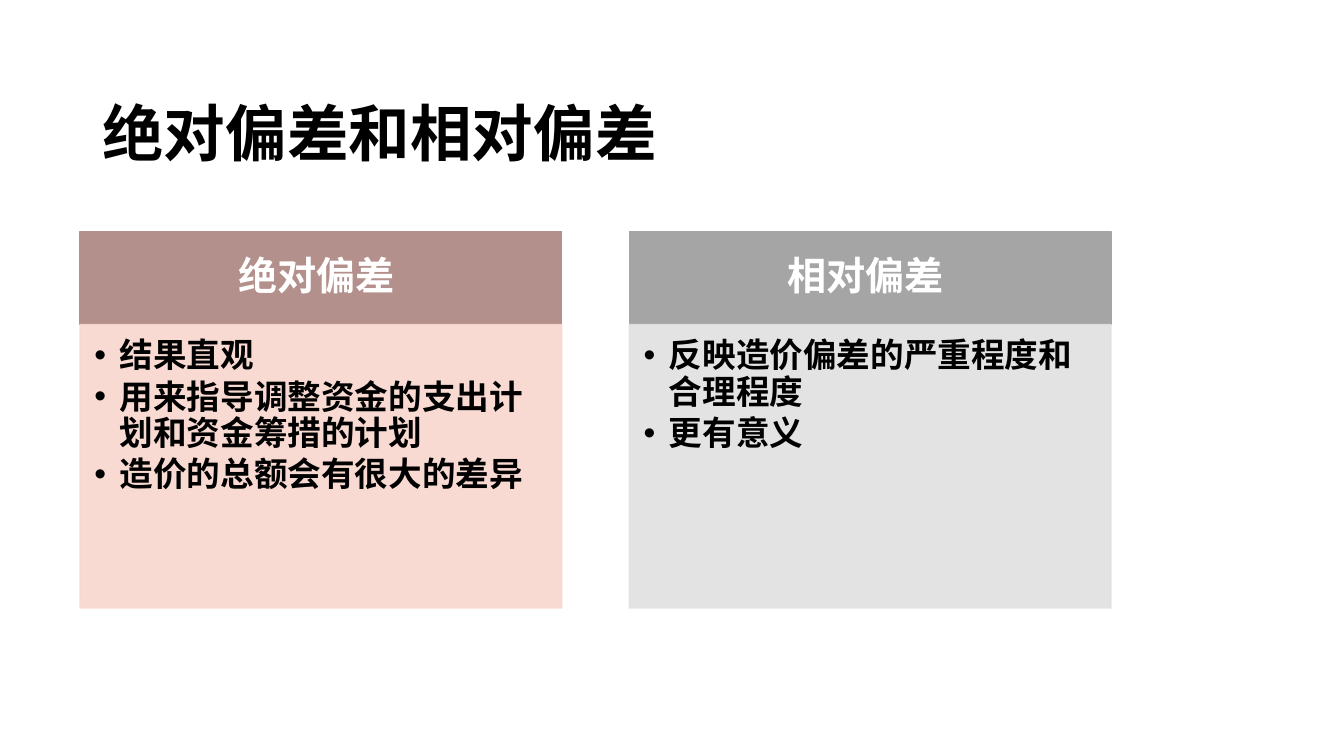
from dataclasses import dataclass

from lxml.etree import SubElement
from pptx import Presentation
from pptx.dml.color import RGBColor
from pptx.enum.lang import MSO_LANGUAGE_ID
from pptx.enum.shapes import MSO_SHAPE
from pptx.enum.text import MSO_ANCHOR, PP_ALIGN
from pptx.oxml.ns import qn
from pptx.util import Cm, Pt


@dataclass(frozen=True)
class Theme:
    font: str = "Times New Roman"
    ink: str = "000000"
    header_ink: str = "FFFFFF"
    rose: str = "B3908C"
    pale_rose: str = "F8D7CE"
    grey: str = "A5A5A5"
    pale_grey: str = "E1E1E1"
    title_size: int = 44
    header_size: int = 28
    body_size: int = 24
    body_opacity: int = 90


@dataclass(frozen=True)
class Box:
    left: int
    top: int
    width: int
    height: int

    def bounds(self):
        return self.left, self.top, self.width, self.height


THEME = Theme()

COLUMNS = [
    ("绝对偏差 ", THEME.rose, THEME.pale_rose,
     ["结果直观", "用来指导调整资金的支出计划和资金筹措的计划", "造价的总额会有很大的差异"]),
    ("相对偏差 ", THEME.grey, THEME.pale_grey,
     ["反映造价偏差的严重程度和合理程度", "更有意义"]),
]


def set_frame(frame, anchor, margins):
    frame.word_wrap = True
    frame.vertical_anchor = anchor
    frame.margin_left, frame.margin_top, frame.margin_right, frame.margin_bottom = map(Cm, margins)


def add_span(para, text, size, color):
    span = para.add_run()
    span.text = text
    span.font.name = THEME.font
    span.font.size = Pt(size)
    span.font.bold = True
    span.font.color.rgb = RGBColor.from_string(color)
    span.font.language_id = MSO_LANGUAGE_ID.SIMPLIFIED_CHINESE


def add_bullet(para):
    properties = para._p.get_or_add_pPr()
    properties.set("marL", str(Cm(0.64)))
    properties.set("indent", str(Cm(-0.64)))
    SubElement(properties, qn("a:buFont"), typeface="Arial")
    SubElement(properties, qn("a:buChar"), char="•")


def add_panel(page, box, color, opacity=100):
    panel = page.shapes.add_shape(MSO_SHAPE.RECTANGLE, *box.bounds())
    panel.shadow.inherit = False
    panel.line.width = Pt(1)
    for fill in (panel.fill, panel.line.fill):
        fill.solid()
        fill.fore_color.rgb = RGBColor.from_string(color)
    if opacity < 100:
        for tint in panel._element.spPr.iter(qn("a:srgbClr")):
            SubElement(tint, qn("a:alpha"), val=str(opacity * 1000))
    return panel.text_frame


def add_title(page, box, text):
    frame = page.shapes.add_textbox(*box.bounds()).text_frame
    set_frame(frame, MSO_ANCHOR.MIDDLE, (0.25, 0.13, 0.25, 0.13))
    para = frame.paragraphs[0]
    para.line_spacing = 1.5
    add_span(para, text, THEME.title_size, THEME.ink)


def add_header(page, box, text, color):
    frame = add_panel(page, box, color)
    set_frame(frame, MSO_ANCHOR.MIDDLE, (0.56, 0.3, 0.56, 0.3))
    para = frame.paragraphs[0]
    para.alignment = PP_ALIGN.CENTER
    para.line_spacing = 0.9
    add_span(para, text, THEME.header_size, THEME.header_ink)


def add_points(page, box, points, color):
    frame = add_panel(page, box, color, THEME.body_opacity)
    set_frame(frame, MSO_ANCHOR.TOP, (0.36, 0.36, 0.48, 0.53))
    for index, point in enumerate(points):
        para = frame.add_paragraph() if index else frame.paragraphs[0]
        para.alignment = PP_ALIGN.LEFT
        para.line_spacing = 0.9
        para.space_after = Pt(THEME.body_size * 0.15)
        add_bullet(para)
        add_span(para, point, THEME.body_size, THEME.ink)


def add_columns(page, box, columns):
    gap = Cm(1.7)
    header_height = Cm(2.34)
    width = (box.width - gap * (len(columns) - 1)) // len(columns)
    for index, (heading, color, pale, points) in enumerate(columns):
        left = box.left + index * (width + gap)
        add_header(page, Box(left, box.top, width, header_height), heading, color)
        body = Box(left, box.top + header_height, width, box.height - header_height)
        add_points(page, body, points, pale)


def main():
    deck = Presentation()
    deck.slide_width = Cm(33.87)
    deck.slide_height = Cm(19.05)
    page = deck.slides.add_slide(deck.slide_layouts[6])
    add_title(page, Box(Cm(2.33), Cm(1.01), Cm(29.21), Cm(3.68)), "绝对偏差和相对偏差")
    add_columns(page, Box(Cm(2.02), Cm(5.84), Cm(25.98), Cm(9.48)), COLUMNS)
    deck.save("out.pptx")


if __name__ == "__main__":
    main()
